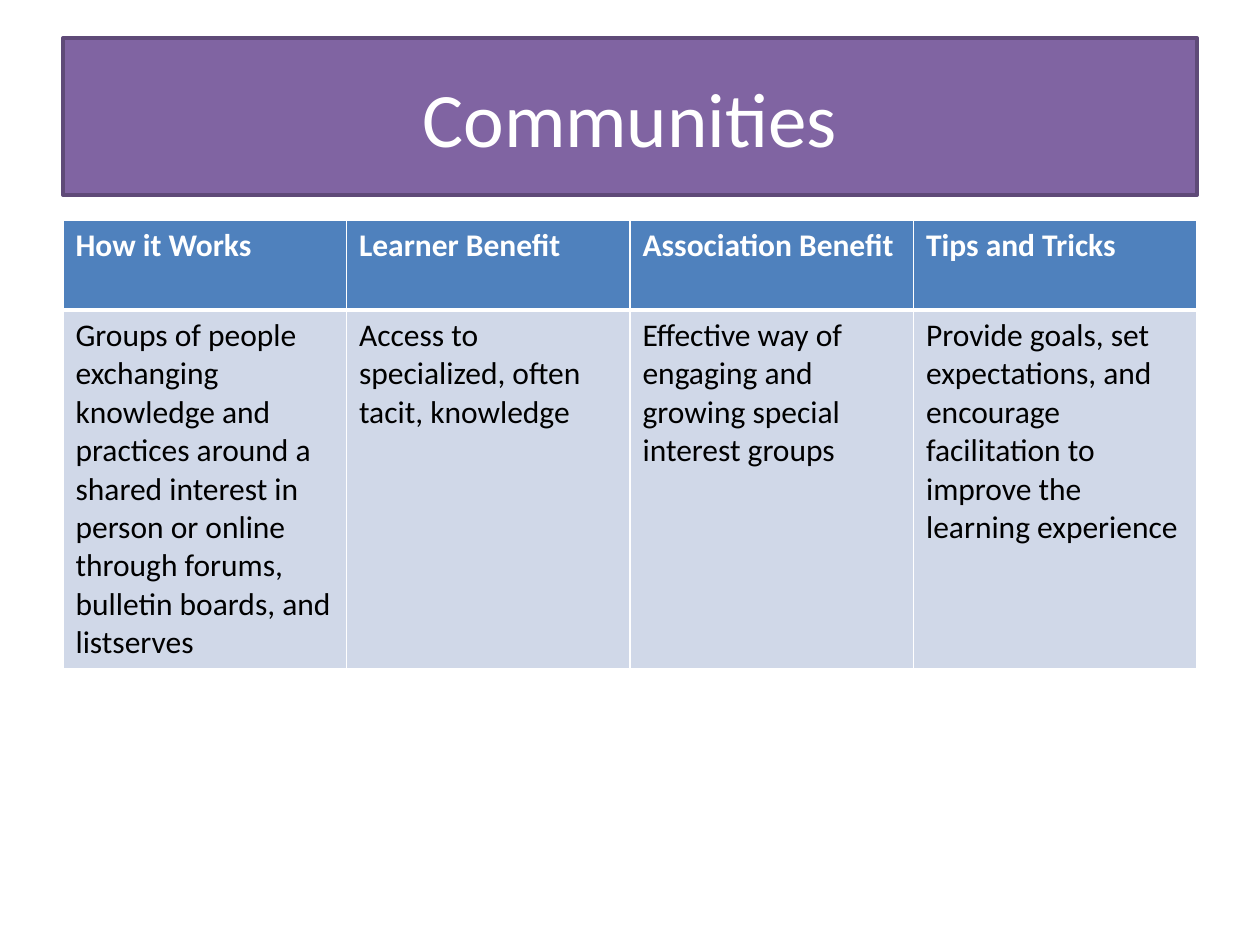
"""Build a slide with a title banner over a four-column table about communities."""
from dataclasses import dataclass

from lxml.etree import SubElement
from pptx import Presentation
from pptx.dml.color import RGBColor as RGB
from pptx.enum.text import MSO_ANCHOR as Anchor, PP_ALIGN as Align
from pptx.oxml.ns import qn
from pptx.util import Inches, Pt


@dataclass(frozen=True)
class Theme:
    font: str = "Calibri"
    title_size: int = 44
    table_size: int = 18
    banner: str = "8064A2"
    banner_line: str = "5F4A78"
    header: str = "4F81BD"
    body: str = "D0D8E8"
    light: str = "FFFFFF"
    dark: str = "000000"
    thin: int = 1
    thick: int = 3


@dataclass(frozen=True)
class Column:
    heading: str
    text: str


@dataclass(frozen=True)
class RowStyle:
    fill: str
    color: str
    bold: bool
    height: float
    top: int
    bottom: int


T = Theme()
WIDTH, HEIGHT = 10, 7.5
MARGIN = WIDTH / 20
CONTENT = WIDTH - 2 * MARGIN
COLUMNS = [
    Column("How it Works",
           "Groups of people exchanging knowledge and practices around a shared "
           "interest in person or online through forums, bulletin boards, and listserves"),
    Column("Learner Benefit", "Access to specialized, often tacit, knowledge"),
    Column("Association Benefit",
           "Effective way of engaging and growing special interest groups"),
    Column("Tips and Tricks",
           "Provide goals, set expectations, and encourage facilitation to improve "
           "the learning experience"),
]
ROWS = [
    RowStyle(T.header, T.light, True, 0.71, T.thin, T.thick),
    RowStyle(T.body, T.dark, False, 2.84, T.thick, T.thin),
]


def format_text(tf, size: int, color: str, bold: bool = False) -> None:
    for p in tf.paragraphs:
        for r in p.runs:
            r.font.name, r.font.size, r.font.bold = T.font, Pt(size), bold
            r.font.color.rgb = RGB.from_string(color)


def add_title(s, text: str) -> None:
    sp = s.shapes.title
    sp.left, sp.top = Inches(MARGIN), Inches(HEIGHT * 0.04)
    sp.width, sp.height = Inches(CONTENT), Inches(HEIGHT / 6)
    sp.fill.solid()
    sp.fill.fore_color.rgb = RGB.from_string(T.banner)
    sp.line.color.rgb = RGB.from_string(T.banner_line)
    sp.line.width = Pt(2)
    tf = sp.text_frame
    tf.text = text
    tf.vertical_anchor = Anchor.MIDDLE
    tf.paragraphs[0].alignment = Align.CENTER
    format_text(tf, T.title_size, T.light)


def add_borders(cell, style: RowStyle) -> None:
    tc_pr = cell._tc.get_or_add_tcPr()
    widths = {"L": T.thin, "R": T.thin, "T": style.top, "B": style.bottom}
    for side, width in widths.items():
        ln = SubElement(tc_pr, qn(f"a:ln{side}"), w=str(Pt(width)))
        fill = SubElement(ln, qn("a:solidFill"))
        SubElement(fill, qn("a:srgbClr"), val=T.light)


def fill_cell(cell, text: str, style: RowStyle) -> None:
    add_borders(cell, style)
    cell.fill.solid()
    cell.fill.fore_color.rgb = RGB.from_string(style.fill)
    cell.text_frame.text = text
    format_text(cell.text_frame, T.table_size, style.color, style.bold)


def add_grid(s, columns: list[Column]) -> None:
    height = sum(style.height for style in ROWS)
    table = s.shapes.add_table(len(ROWS), len(columns), Inches(MARGIN), Inches(1.75),
                               Inches(CONTENT), Inches(height)).table
    for row, style in zip(table.rows, ROWS):
        row.height = Inches(style.height)
    for c, column in enumerate(columns):
        table.columns[c].width = Inches(CONTENT / len(columns))
        for r, text in enumerate((column.heading, column.text)):
            fill_cell(table.cell(r, c), text, ROWS[r])


def main() -> None:
    prs = Presentation()
    prs.slide_width, prs.slide_height = Inches(WIDTH), Inches(HEIGHT)
    s = prs.slides.add_slide(prs.slide_layouts[5])
    add_title(s, "Communities")
    add_grid(s, COLUMNS)
    prs.save("out.pptx")


if __name__ == "__main__":
    main()
